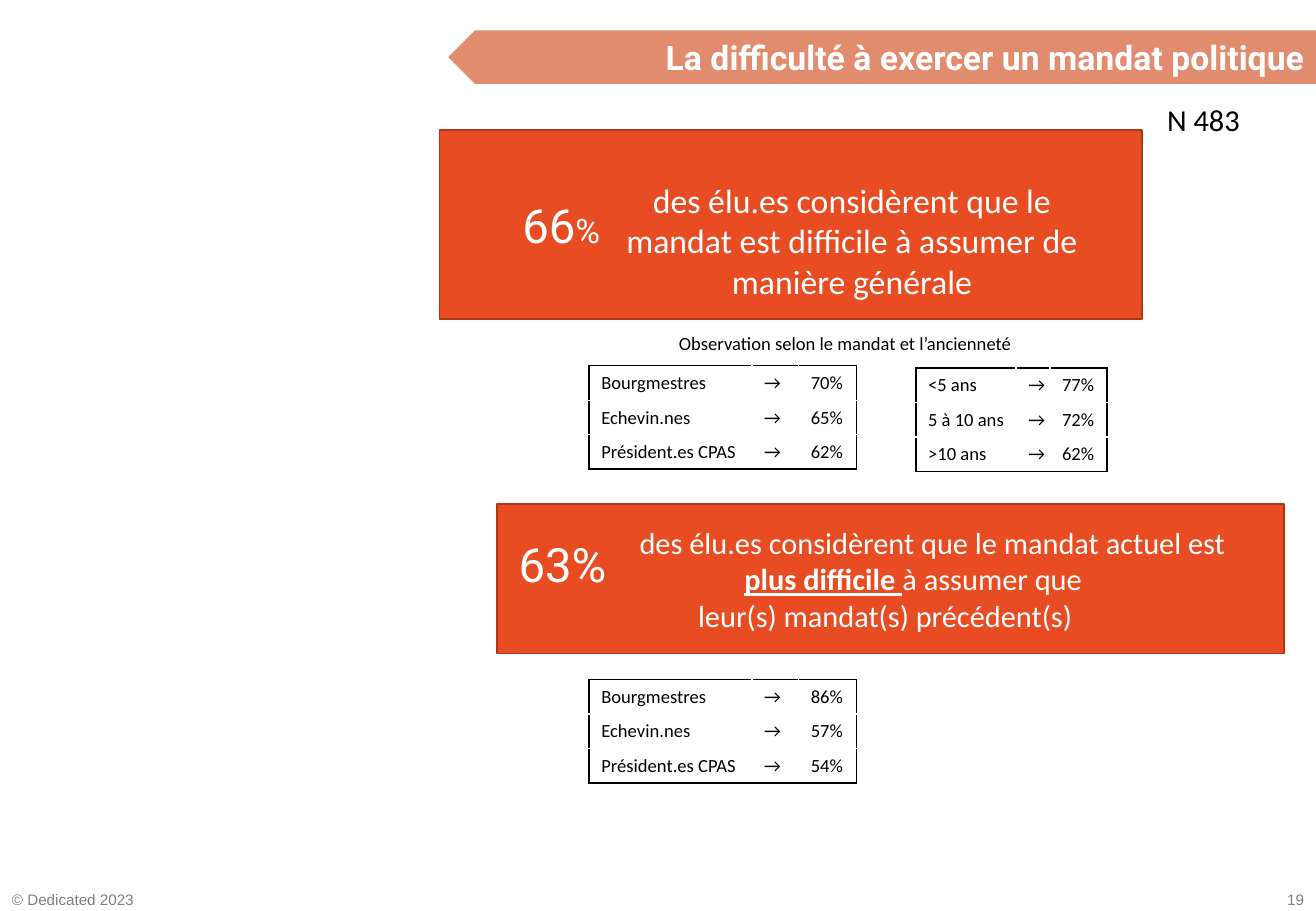
from dataclasses import dataclass

from pptx import Presentation
from pptx.dml.color import RGBColor
from pptx.enum.shapes import MSO_SHAPE
from pptx.enum.text import MSO_ANCHOR, PP_ALIGN
from pptx.oxml import parse_xml
from pptx.oxml.ns import nsdecls
from pptx.util import Pt

LEFT, CENTER, RIGHT = PP_ALIGN.LEFT, PP_ALIGN.CENTER, PP_ALIGN.RIGHT
TOP, MIDDLE = MSO_ANCHOR.TOP, MSO_ANCHOR.MIDDLE
RECT, PENTAGON = MSO_SHAPE.RECTANGLE, MSO_SHAPE.PENTAGON

BLACK, WHITE, GREY = "000000", "FFFFFF", "808080"
ORANGE, DARK_ORANGE, SALMON = "E84C22", "AC3819", "E18B6F"
ROW_HEIGHT = 20.4


@dataclass
class Label:
    text: str
    x: float
    y: float
    w: float
    h: float
    size: float
    font: str = "Calibri"
    color: str = BLACK
    align: PP_ALIGN = CENTER


@dataclass
class Breakdown:
    x: float
    y: float
    widths: tuple[float, ...]
    shares: dict[str, str]


LABELS = [
    Label("© Dedicated 2023", 0, 524, 92, 18, 9, "Arial", GREY, LEFT),
    Label("19", 732, 524, 48, 18, 9, "Arial", GREY, RIGHT),
    Label("des élu.es considèrent que le mandat est difficile à assumer de "
          "manière générale", 360, 103, 290, 80, 20, color=WHITE),
    Label("Observation selon le mandat et l’ancienneté", 371, 193, 260, 21, 11),
    Label("N 483", 684.7, 56.2, 64, 29, 18, align=LEFT),
    Label("63%", 286, 314, 94.6, 41, 28, "Roboto", WHITE),
]

MANDATE_WIDTHS = (96.6, 27.6, 34.2)
SENIORITY_WIDTHS = (59.4, 20, 34)
BREAKDOWNS = [
    Breakdown(349.2, 216.8, MANDATE_WIDTHS,
              {"Bourgmestres": "70%", "Echevin.nes": "65%", "Président.es CPAS": "62%"}),
    Breakdown(542.9, 218.1, SENIORITY_WIDTHS,
              {"<5 ans": "77%", "5 à 10 ans": "72%", ">10 ans": "62%"}),
    Breakdown(349.2, 402.8, MANDATE_WIDTHS,
              {"Bourgmestres": "86%", "Echevin.nes": "57%", "Président.es CPAS": "54%"}),
]

# Left indent in points and the runs of each line
HARDER_LINES = [
    (56, ["des élu.es considèrent que le mandat actuel est"]),
    (33, ["plus difficile ", "à assumer que"]),
    (0, ["leur(s) mandat(s) précédent(s)"]),
]


def rgb(color: str) -> RGBColor:
    return RGBColor.from_string(color)


def style(font, size: float, name: str, color: str, bold: bool = False) -> None:
    font.size = Pt(size)
    font.name = name
    font.bold = bold
    font.color.rgb = rgb(color)


def add_label(s, label: Label):
    sp = s.shapes.add_textbox(Pt(label.x), Pt(label.y), Pt(label.w), Pt(label.h))
    tf = sp.text_frame
    tf.word_wrap = True
    tf.text = label.text
    p = tf.paragraphs[0]
    p.alignment = label.align
    style(p.runs[0].font, label.size, label.font, label.color)
    return p


def add_box(s, kind, x: float, y: float, w: float, h: float, fill: str,
            line: str | None = None):
    sp = s.shapes.add_shape(kind, Pt(x), Pt(y), Pt(w), Pt(h))
    sp.shadow.inherit = False
    sp.fill.solid()
    sp.fill.fore_color.rgb = rgb(fill)
    if line:
        sp.line.color.rgb = rgb(line)
        sp.line.width = Pt(1)
    else:
        sp.line.fill.background()
    return sp


def add_border(cell, side: str) -> None:
    """Draw one black edge; side is L, R, T or B."""
    cell._tc.get_or_add_tcPr().append(parse_xml(
        f'<a:ln{side} {nsdecls("a")} w="{Pt(1)}"><a:solidFill>'
        f'<a:srgbClr val="{BLACK}"/></a:solidFill></a:ln{side}>'))


def add_breakdown(s, b: Breakdown) -> None:
    rows = [(name, "→", share) for name, share in b.shares.items()]
    last_row, last_col = len(rows) - 1, len(b.widths) - 1
    table = s.shapes.add_table(len(rows), len(b.widths), Pt(b.x), Pt(b.y),
                               Pt(sum(b.widths)), Pt(ROW_HEIGHT * len(rows))).table
    table.first_row = table.horz_banding = False
    for column, width in zip(table.columns, b.widths):
        column.width = Pt(width)
    for i, row in enumerate(rows):
        table.rows[i].height = Pt(ROW_HEIGHT)
        for j, text in enumerate(row):
            cell = table.cell(i, j)
            cell.text_frame.text = text
            style(cell.text_frame.paragraphs[0].runs[0].font, 11, "Calibri", BLACK)
            edges = {"L": j == 0, "R": j == last_col, "T": i == 0, "B": i == last_row}
            for side, outer in edges.items():
                if outer:
                    add_border(cell, side)
            cell.fill.solid()
            cell.fill.fore_color.rgb = rgb(WHITE)


def add_title(s) -> None:
    sp = add_box(s, PENTAGON, 265.7, 18, 514.8, 31.7, SALMON)
    sp._element.spPr.xfrm.set("flipH", "1")
    tf = sp.text_frame
    tf.vertical_anchor = TOP
    tf.text = "La difficulté à exercer un mandat politique"
    p = tf.paragraphs[0]
    p.alignment = RIGHT
    style(p.runs[0].font, 20, "Roboto", WHITE, bold=True)


def add_harder_box(s) -> None:
    sp = add_box(s, RECT, 294.5, 298.8, 466.6, 88.6, ORANGE, DARK_ORANGE)
    tf = sp.text_frame
    tf.vertical_anchor = MIDDLE
    tf.margin_right = Pt(13.2)
    for i, (indent, texts) in enumerate(HARDER_LINES):
        p = tf.paragraphs[0] if i == 0 else tf.add_paragraph()
        p._p.get_or_add_pPr().set("marL", str(Pt(indent)))
        p.alignment = CENTER
        for text in texts:
            r = p.add_run()
            r.text = text
            style(r.font, 18, "Calibri", WHITE)
    emphasis = tf.paragraphs[1].runs[0].font
    emphasis.bold = emphasis.underline = True


def main() -> None:
    prs = Presentation()
    prs.slide_width, prs.slide_height = Pt(780), Pt(540)
    s = prs.slides.add_slide(prs.slide_layouts[6])

    add_box(s, RECT, 260.6, 77, 416.2, 112.3, ORANGE, DARK_ORANGE)
    add_title(s)
    add_harder_box(s)
    for label in LABELS:
        add_label(s, label)
    p = add_label(s, Label("66", 294.5, 113, 76.3, 41, 28, "Roboto", WHITE))
    r = p.add_run()
    r.text = "%"
    style(r.font, 20, "Roboto", WHITE)
    for breakdown in BREAKDOWNS:
        add_breakdown(s, breakdown)

    prs.save("out.pptx")


if __name__ == "__main__":
    main()
